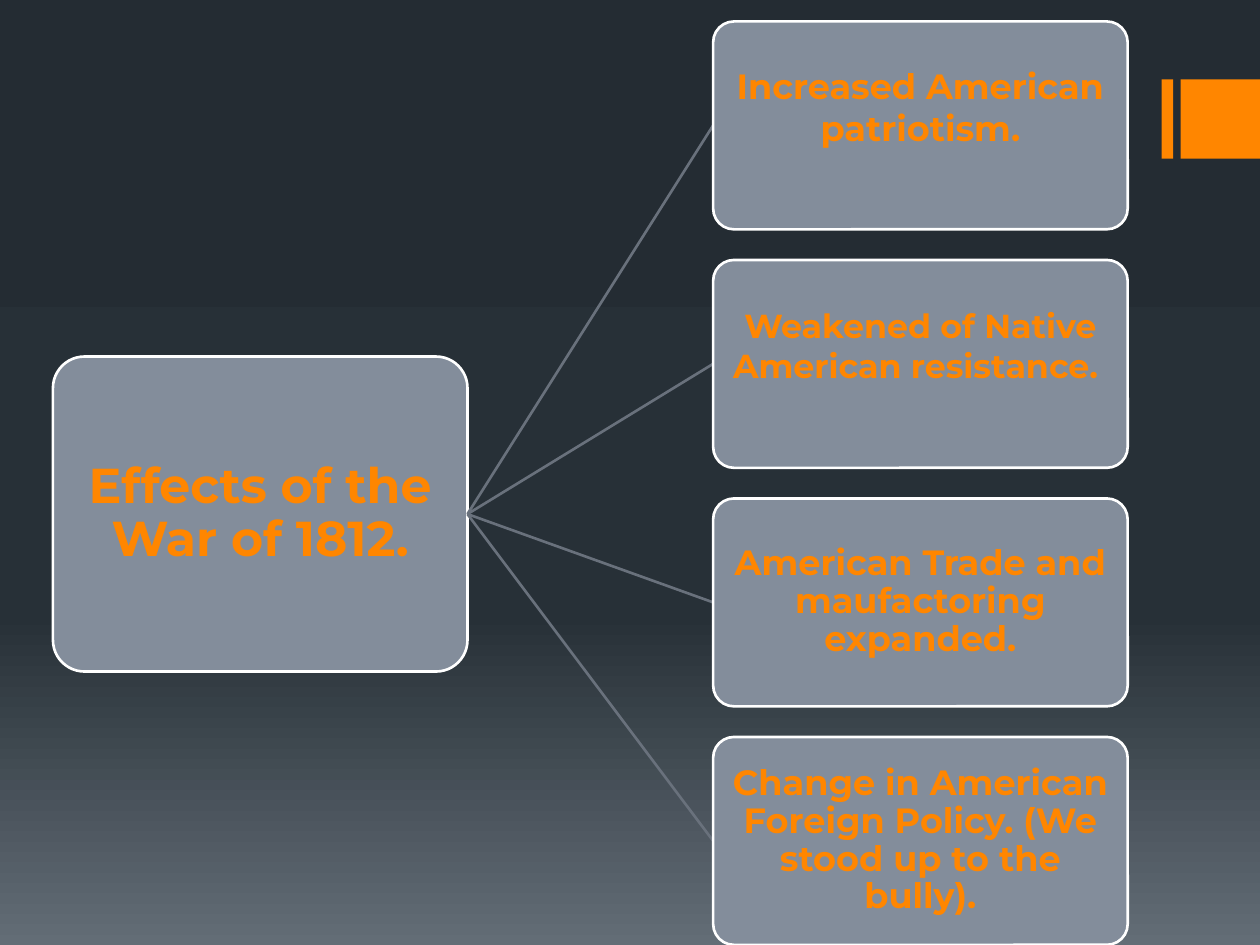
from copy import deepcopy
from lxml import etree
from pptx import Presentation
from pptx import util as u
from pptx.dml.color import RGBColor
from pptx.enum import shapes, text
from pptx.oxml.ns import qn

# Content: text, size, line spacing, bottom inset
CAUSE = ("Effects of the War of 1812.", 28, 0.9, 0.02)
EFFECTS = [
    ("Increased American patriotism.", 20, 1.0, 0.31),
    ("Weakened of Native American resistance. ", 19, 1.0, 0.3),
    ("American Trade and maufactoring expanded.", 20, 0.9, 0.01),
    ("Change in American Foreign Policy. (We stood up to the bully).", 20, 0.9, 0.01),
]
COLORS = {"accent": "FF8600", "box": "838D9B", "border": "FFFFFF", "link": "69717C"}
BACKGROUND = [(0, "242C33"), (0.65, "273037"), (1, "636D76")]
FONT = "Montserrat"

# Layout in inches
BOX_W = 3.29
CAUSE_X, CAUSE_Y, CAUSE_H = 0.42, 2.83, 2.5
EFFECT_X, EFFECT_Y, EFFECT_H, EFFECT_STEP = 5.66, 0.17, 1.65, 1.893
TAB_Y, TAB_H = 0.63, 0.63
TABS = [(9.22, 0.09), (9.37, 0.63)]


def rgb(name):
    return RGBColor.from_string(COLORS[name])


def add_shape(s, kind, x, y, w, h, fill):
    sp = s.shapes.add_shape(kind, *map(u.Inches, (x, y, w, h)))
    sp.shadow.inherit = False
    sp.fill.solid()
    sp.fill.fore_color.rgb = rgb(fill)
    sp.line.fill.background()
    return sp


def add_box(s, x, y, h, content, inset):
    words, size, spacing, bottom = content
    sp = add_shape(s, shapes.MSO_SHAPE.ROUNDED_RECTANGLE, x, y, BOX_W, h, "box")
    sp.adjustments[0] = 0.1
    sp.line.color.rgb = rgb("border")
    sp.line.width = u.Pt(1.5)
    tf = sp.text_frame
    tf.word_wrap = True
    tf.vertical_anchor = text.MSO_ANCHOR.MIDDLE
    tf.margin_left = tf.margin_right = tf.margin_top = u.Inches(inset)
    tf.margin_bottom = u.Inches(bottom)
    p = tf.paragraphs[0]
    p.alignment = text.PP_ALIGN.CENTER
    p.line_spacing = spacing
    r = p.add_run()
    r.text = words
    r.font.name, r.font.size, r.font.bold = FONT, u.Pt(size), True
    r.font.color.rgb = rgb("accent")


def add_link(s, x1, y1, x2, y2):
    cx = s.shapes.add_connector(shapes.MSO_CONNECTOR.STRAIGHT,
                                *map(u.Inches, (x1, y1, x2, y2)))
    cx.line.color.rgb = rgb("link")
    cx.line.width = u.Pt(1.5)
    etree.SubElement(cx._element.spPr, qn("a:effectLst"))


def set_background(s):
    fill = s.background.fill
    fill.gradient()
    fill.gradient_angle = 270
    stops = next(s._element.iter(qn("a:gsLst")))
    stops.append(deepcopy(stops[-1]))
    for stop, (position, color) in zip(fill.gradient_stops, BACKGROUND):
        stop.position = position
        stop.color.rgb = RGBColor.from_string(color)


def main():
    prs = Presentation()
    prs.slide_width, prs.slide_height = u.Inches(10), u.Inches(7.5)
    s = prs.slides.add_slide(prs.slide_layouts[6])
    set_background(s)

    # Accent tabs at the right edge
    for x, w in TABS:
        add_shape(s, shapes.MSO_SHAPE.RECTANGLE, x, TAB_Y, w, TAB_H, "accent")

    # Cause, then each effect with its link
    add_box(s, CAUSE_X, CAUSE_Y, CAUSE_H, CAUSE, 0.02)
    for i, effect in enumerate(EFFECTS):
        y = EFFECT_Y + i * EFFECT_STEP
        add_link(s, CAUSE_X + BOX_W, CAUSE_Y + CAUSE_H / 2, EFFECT_X, y + EFFECT_H / 2)
        add_box(s, EFFECT_X, y, EFFECT_H, effect, 0.01)

    prs.save("out.pptx")


if __name__ == "__main__":
    main()
